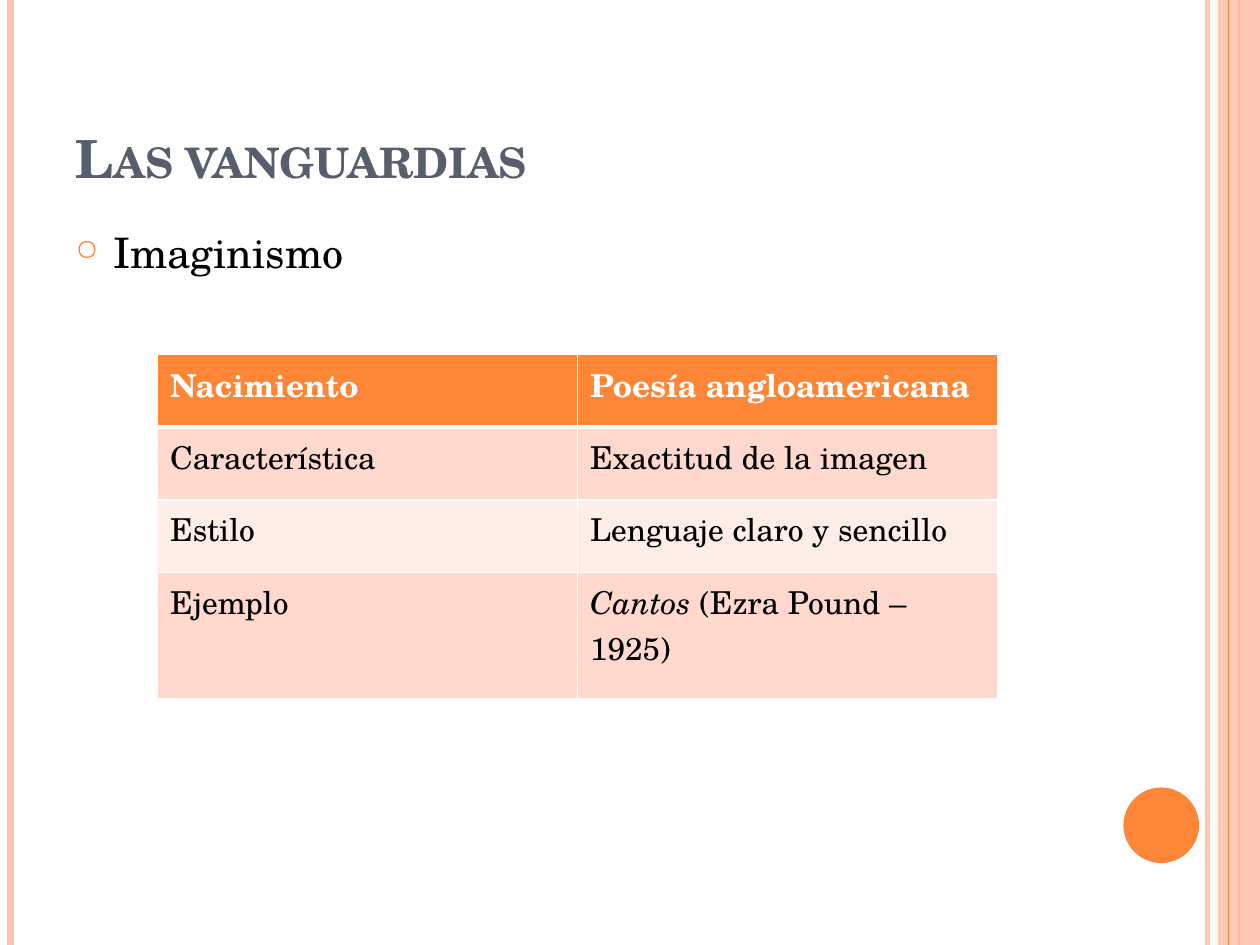
from dataclasses import dataclass

from lxml.etree import SubElement
from pptx import Presentation
from pptx.dml.color import RGBColor
from pptx.enum.shapes import MSO_CONNECTOR as Connector, MSO_SHAPE as Shape
from pptx.enum.text import MSO_ANCHOR as Anchor
from pptx.oxml.ns import qn
from pptx.slide import Slide
from pptx.util import Pt

ORANGE, SALMON, SLATE = "FE8637", "FEC3AE", "575F6D"
DEEP_BAND, PALE_BAND = "FFD9CE", "FFEDE8"
BLACK, WHITE = "000000", "FFFFFF"
WIDTH, HEIGHT = 720, 540


def points(*lengths):
    return [Pt(length) for length in lengths]


def paint(fill, color, opacity=100):
    fill.solid()
    fill.fore_color.rgb = RGBColor.from_string(color)
    if opacity < 100:
        tint = fill._xPr.find(qn("a:solidFill"))[0]
        SubElement(tint, qn("a:alpha"), val=str(opacity * 1000))


@dataclass
class SlideStyle:
    slide: Slide
    font: str = "TeX Gyre Schola"

    def rule(self, x, color, weight, opacity=100):
        line = self.slide.shapes.add_connector(
            Connector.STRAIGHT, *points(x, 0, x, HEIGHT))
        line.line.width = Pt(weight)
        paint(line.line.fill, color, opacity)
        SubElement(line._element.spPr, qn("a:effectLst"))

    def shape(self, kind, box, color, opacity=100):
        shape = self.slide.shapes.add_shape(kind, *points(*box))
        shape.shadow.inherit = False
        shape.line.fill.background()
        paint(shape.fill, color, opacity)

    def run(self, paragraph, text, color, **formats):
        run = paragraph.add_run()
        run.text = text
        for attribute, value in ({"name": self.font} | formats).items():
            setattr(run.font, attribute, value)
        paint(run.font.fill, color)
        return run

    def text(self, box, text, color, anchor=Anchor.TOP, **formats):
        frame = self.slide.shapes.add_textbox(*points(*box)).text_frame
        frame.word_wrap = True
        frame.vertical_anchor = anchor
        return self.run(frame.paragraphs[0], text, color, **formats), frame.paragraphs[0]

    def title(self, box, text):
        run, _ = self.text(box, text, SLATE, Anchor.BOTTOM, size=Pt(30), bold=True)
        run.font._element.set("cap", "small")

    def bullet(self, box, text, indent):
        _, paragraph = self.text(box, text, BLACK, size=Pt(24))
        paragraph.space_before = Pt(6)
        properties = paragraph._p.get_or_add_pPr()
        properties.set("marL", str(Pt(indent)))
        properties.set("indent", str(-Pt(indent)))
        tint = SubElement(properties, qn("a:buClr"))
        SubElement(tint, qn("a:srgbClr"), val=ORANGE)
        SubElement(properties, qn("a:buSzPct"), val="70000")
        SubElement(properties, qn("a:buChar"), char="○")

    def borders(self, cell, **weights):
        properties = cell._tc.get_or_add_tcPr()
        for side in "LRTB":
            edge = SubElement(properties, qn(f"a:ln{side}"), w=str(Pt(weights.get(side, 1))))
            SubElement(SubElement(edge, qn("a:solidFill")), qn("a:srgbClr"), val=WHITE)

    def table(self, box, heights, rows):
        grid = self.slide.shapes.add_table(len(rows), len(rows[0]), *points(*box)).table
        for r, (height, row) in enumerate(zip(heights, rows)):
            grid.rows[r].height = Pt(height)
            header = r == 0
            band = ORANGE if header else DEEP_BAND if r % 2 else PALE_BAND
            edges = {0: {"B": 3}, 1: {"T": 3}}.get(r, {})
            for c, runs in enumerate(row):
                cell = grid.cell(r, c)
                self.borders(cell, **edges)
                paint(cell.fill, band)
                for text, italic in runs:
                    self.run(cell.text_frame.paragraphs[0], text,
                             WHITE if header else BLACK,
                             size=Pt(18), bold=header, italic=italic)


def main():
    deck = Presentation()
    deck.slide_width, deck.slide_height = points(WIDTH, HEIGHT)
    style = SlideStyle(deck.slides.add_slide(deck.slide_layouts[6]))

    style.rule(690, SALMON, 3, 93)
    style.rule(6, SALMON, 4.5)
    style.rule(708, ORANGE, 1.5)
    style.shape(Shape.RECTANGLE, (696, 0, 24, HEIGHT), SALMON, 87)
    style.rule(702, ORANGE, 0.75)
    style.shape(Shape.OVAL, (642, 450, 43.2, 43.2), ORANGE)

    style.title((36, 21.6, 588, 90), "Las vanguardias")
    style.bullet((36, 126, 588, 384), "Imaginismo", 21.6)

    imagism = [
        ([("Nacimiento", False)], [("Poesía angloamericana", False)]),
        ([("Característica", False)], [("Exactitud de la imagen", False)]),
        ([("Estilo", False)], [("Lenguaje claro y sencillo", False)]),
        ([("Ejemplo", False)], [("Cantos", True), (" (Ezra Pound – 1925)", False)]),
    ]
    style.table((90, 202.5, 480, 196.6), (41.6, 41.6, 41.6, 71.8), imagism)
    deck.save("out.pptx")


if __name__ == "__main__":
    main()
